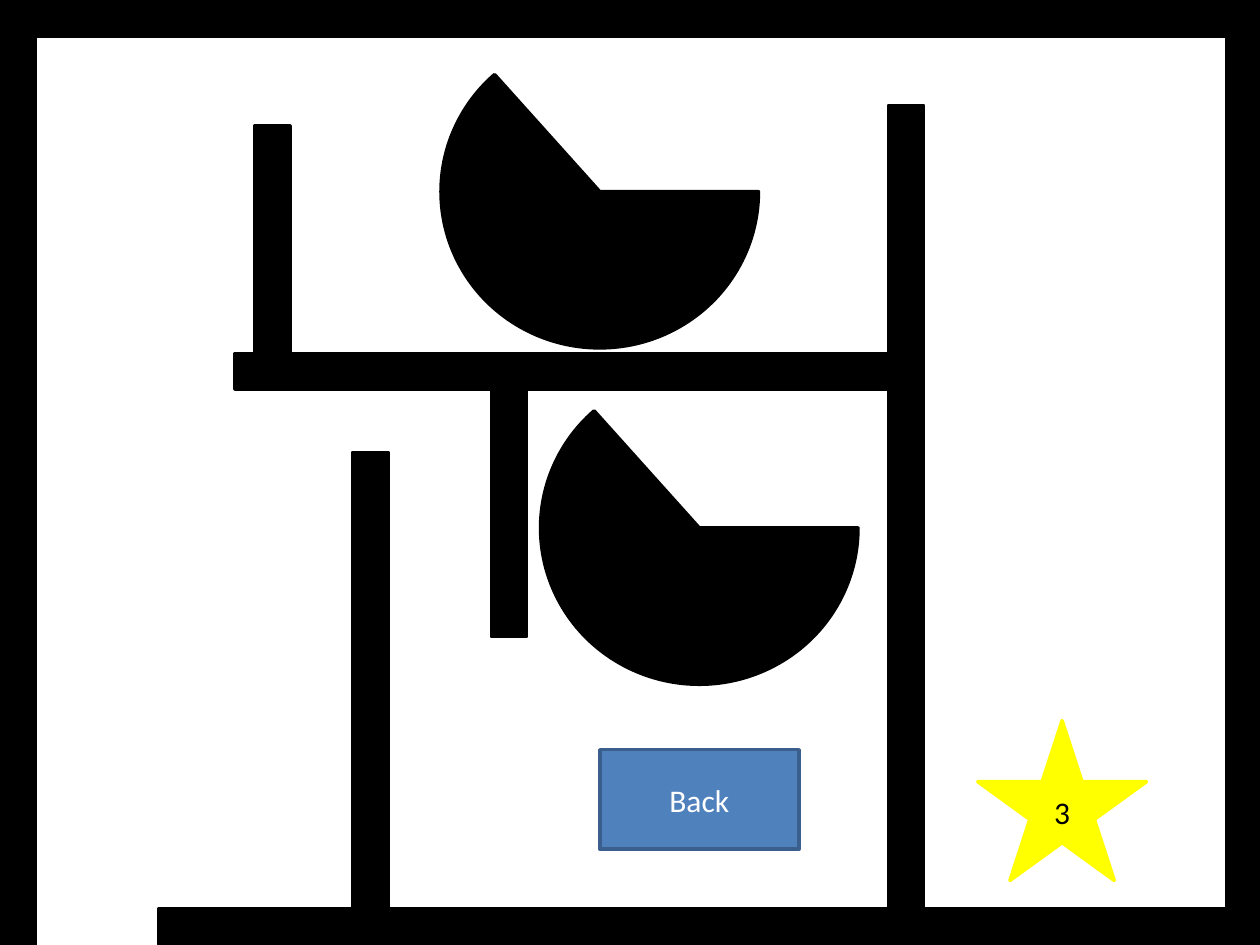
from dataclasses import dataclass

from pptx import Presentation
from pptx.dml.color import RGBColor
from pptx.enum.shapes import MSO_SHAPE as Preset
from pptx.enum.text import MSO_ANCHOR as Anchor, PP_ALIGN as Align
from pptx.util import Pt

BLACK, WHITE, YELLOW = "000000", "FFFFFF", "FFFF00"
BLUE, DARK_BLUE = "4F81BD", "3A5F8C"
BAR_THICKNESS = 20.2
PIE_WIDTH, PIE_HEIGHT = 181.4, 178.6
PIE_END = 136.845


@dataclass(frozen=True)
class Bar:
    left: float
    top: float
    length: float
    rotation: float = 0


@dataclass(frozen=True)
class Label:
    preset: Preset
    left: float
    top: float
    width: float
    height: float
    text: str
    fill: str
    outline: str
    ink: str


@dataclass(frozen=True)
class Pie:
    left: float
    top: float


FRAME = [
    Bar(0, 0, 540),
    Bar(701.3, 0, 540),
    Bar(351.4, -352.8, 726.5, 90),
    Bar(395.3, 214.6, 629.3, 90),
]
LABELS = [
    Label(Preset.STAR_5_POINT, 558.7, 411.8, 96.5, 91.4, "3", YELLOW, YELLOW, BLACK),
    Label(Preset.RECTANGLE, 342.7, 428.4, 113.8, 56.9, "Back", BLUE, DARK_BLUE, WHITE),
]
WALLS = [
    Bar(507.6, 60.5, 477.4),
    Bar(319.7, 16.6, 391, 90),
    Bar(201.6, 258.5, 281.5),
    Bar(145.4, 72, 149.8),
    Bar(280.8, 213.8, 149.8),
]
PIES = [Pie(252, 20.2), Pie(308.9, 212.4)]


def paint(color_format, color: str) -> None:
    color_format.rgb = RGBColor.from_string(color)


def draw_shape(page, preset: Preset, left: float, top: float, width: float,
               height: float, fill: str = BLACK, outline: str = BLACK):
    shape = page.shapes.add_shape(preset, Pt(left), Pt(top), Pt(width), Pt(height))
    shape.shadow.inherit = False
    shape.fill.solid()
    paint(shape.fill.fore_color, fill)
    paint(shape.line.color, outline)
    shape.line.width = Pt(2)
    return shape


def draw_bar(page, bar: Bar) -> None:
    shape = draw_shape(page, Preset.RECTANGLE, bar.left, bar.top,
                       BAR_THICKNESS, bar.length)
    shape.rotation = bar.rotation


def draw_label(page, label: Label) -> None:
    shape = draw_shape(page, label.preset, label.left, label.top, label.width,
                       label.height, label.fill, label.outline)
    frame = shape.text_frame
    frame.text = label.text
    frame.vertical_anchor = Anchor.MIDDLE
    para = frame.paragraphs[0]
    para.alignment = Align.CENTER
    para.font.name = "Calibri"
    para.font.size = Pt(18)
    paint(para.font.color, label.ink)


def draw_pie(page, pie: Pie) -> None:
    shape = draw_shape(page, Preset.PIE, pie.left, pie.top, PIE_WIDTH, PIE_HEIGHT)
    shape.adjustments[0] = 0
    shape.adjustments[1] = PIE_END


def main() -> None:
    deck = Presentation()
    deck.slide_width, deck.slide_height = Pt(720), Pt(540)
    page = deck.slides.add_slide(deck.slide_layouts[6])
    page.background.fill.solid()
    paint(page.background.fill.fore_color, WHITE)
    for bar in FRAME:
        draw_bar(page, bar)
    for label in LABELS:
        draw_label(page, label)
    for bar in WALLS:
        draw_bar(page, bar)
    for pie in PIES:
        draw_pie(page, pie)
    deck.save("out.pptx")


if __name__ == "__main__":
    main()
